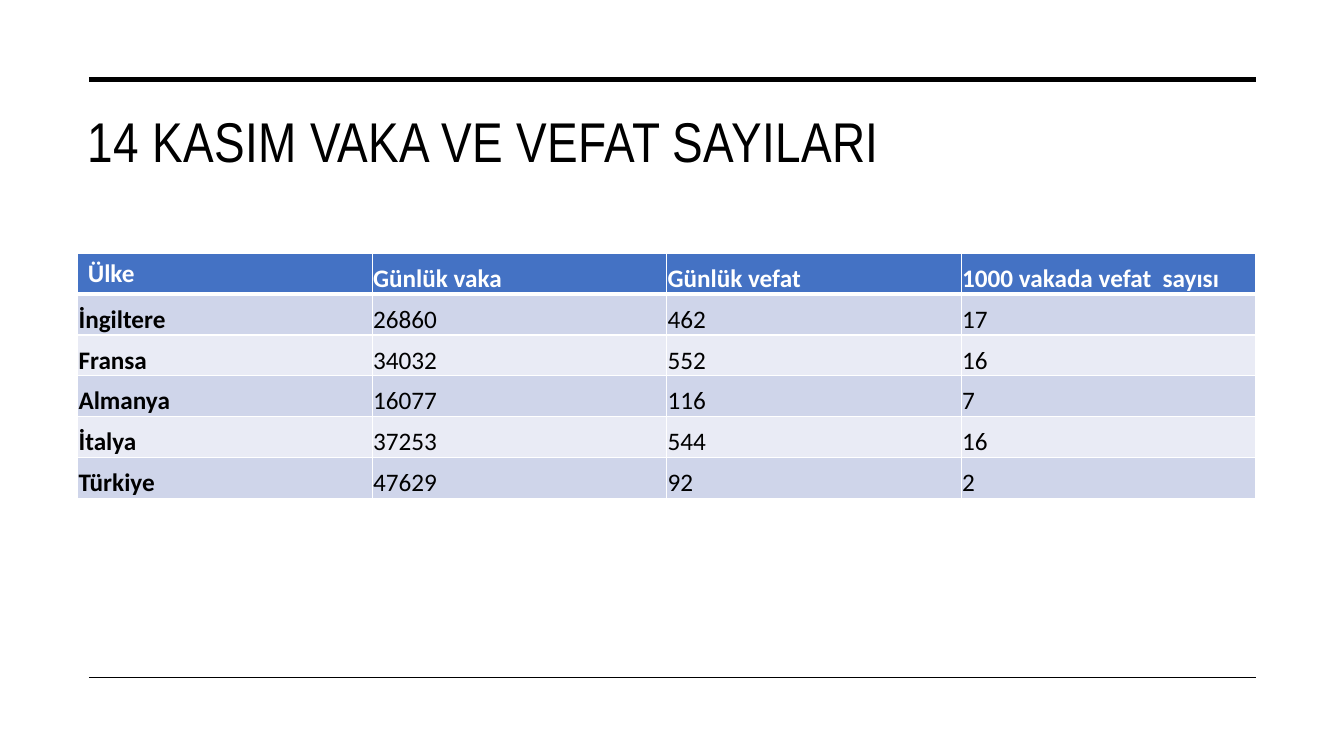
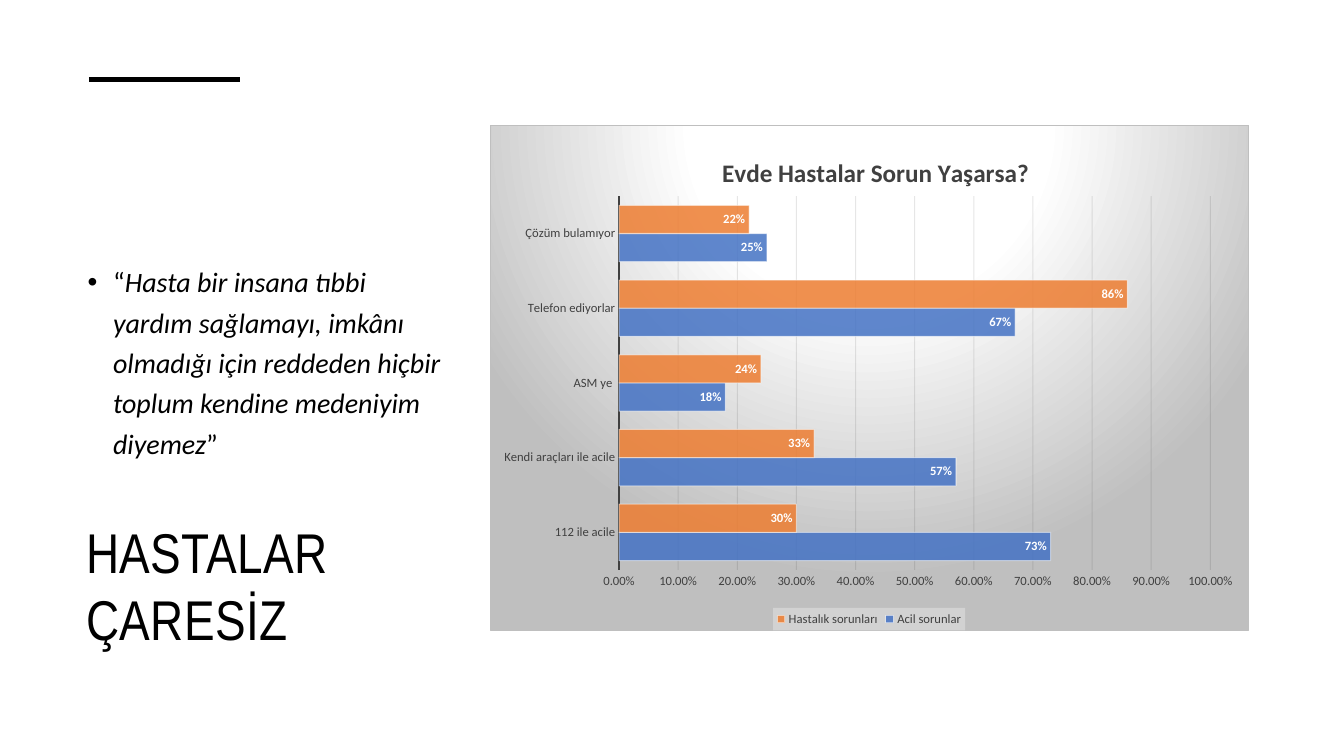
from dataclasses import dataclass

from lxml.etree import SubElement
from pptx import Presentation
from pptx.chart.data import CategoryChartData
from pptx.dml.color import RGBColor
from pptx.enum.chart import XL_CHART_TYPE, XL_LABEL_POSITION, XL_LEGEND_POSITION, XL_TICK_MARK
from pptx.enum.shapes import MSO_CONNECTOR
from pptx.enum.text import MSO_ANCHOR
from pptx.oxml import parse_xml
from pptx.oxml.ns import nsdecls, qn
from pptx.util import Cm, Pt

CASES_TITLE = "14 KASIM VAKA VE VEFAT SAYILARI"
CASES = [
    ("Ülke", "Günlük vaka", "Günlük vefat", "1000 vakada vefat  sayısı"),
    ("İngiltere", "26860", "462", "17"),
    ("Fransa", "34032", "552", "16"),
    ("Almanya", "16077", "116", "7"),
    ("İtalya", "37253", "544", "16"),
    ("Türkiye", "47629", "92", "2"),
]

HELPLESS_TITLE = "HASTALAR ÇARESİZ"
QUOTE = ("Hasta bir insana tıbbi yardım sağlamayı, imkânı olmadığı için "
         "reddeden hiçbir toplum kendine medeniyim diyemez")
HELP_TITLE = "Evde Hastalar Sorun Yaşarsa?"
HELP_ROUTES = ["112 ile acile", "Kendi araçları ile acile", "ASM ye ",
               "Telefon ediyorlar", "Çözüm bulamıyor"]
HELP_SHARES = {
    "Acil sorunlar": (0.73, 0.57, 0.18, 0.67, 0.25),
    "Hastalık sorunları": (0.3, 0.33, 0.24, 0.86, 0.22),
}


@dataclass(frozen=True)
class Theme:
    heading_font: str = "Arial Narrow"
    body_font: str = "Calibri"
    black: str = "000000"
    white: str = "FFFFFF"
    grey_text: str = "404040"
    grid: str = "0D0D0D"
    chart_edge: str = "BFBFBF"
    legend_back: str = "F2F2F2"
    blue: str = "4472C4"
    orange: str = "ED7D31"
    bands: tuple = ("E9EBF5", "CFD5EA")
    title_size: float = 40
    quote_size: float = 20
    table_size: float = 18
    chart_title_size: float = 18
    chart_size: float = 9
    thick: float = 3.5
    thin: float = 1


THEME = Theme()
LEFT, RIGHT = 2.24, 31.65
TOP_RULE, BOTTOM_RULE = 2.01, 17.07


def style_font(font, size, color, name=THEME.body_font, bold=False, italic=False):
    font.name, font.size, font.bold, font.italic = name, Pt(size), bold, italic
    font.color.rgb = RGBColor.from_string(color)


def write(paragraph, text, spacing=0, **style):
    run = paragraph.add_run()
    run.text = text
    style_font(run.font, **style)
    if spacing:
        run.font._element.set("spc", str(round(spacing * 100)))


def add_frame(slide, box, anchor=MSO_ANCHOR.TOP):
    frame = slide.shapes.add_textbox(*map(Cm, box)).text_frame
    frame.word_wrap = True
    frame.vertical_anchor = anchor
    return frame


def add_title(slide, text, box, anchor=MSO_ANCHOR.TOP):
    frame = add_frame(slide, box, anchor)
    write(frame.paragraphs[0], text, spacing=0.3, size=THEME.title_size,
          color=THEME.black, name=THEME.heading_font)


def add_rule(slide, y, width, right=RIGHT):
    rule = slide.shapes.add_connector(MSO_CONNECTOR.STRAIGHT, Cm(LEFT), Cm(y), Cm(right), Cm(y))
    rule.line.color.rgb = RGBColor.from_string(THEME.black)
    rule.line.width = Pt(width)
    SubElement(rule._element.spPr, qn("a:effectLst"))


def add_borders(cell, bottom):
    """Outline a cell in white, with its own bottom width in points."""
    properties = cell._tc.get_or_add_tcPr()
    widths = {"lnL": 1, "lnR": 1, "lnT": 1, "lnB": bottom}
    for place, (side, width) in enumerate(widths.items()):
        properties.insert(place, parse_xml(
            f'<a:{side} {nsdecls("a")} w="{Pt(width)}"><a:solidFill>'
            f'<a:srgbClr val="{THEME.white}"/></a:solidFill></a:{side}>'))


def add_cases_table(slide, box):
    table = slide.shapes.add_table(len(CASES), len(CASES[0]), *map(Cm, box)).table
    for r, record in enumerate(CASES):
        header = r == 0
        for c, value in enumerate(record):
            cell = table.cell(r, c)
            cell.fill.solid()
            cell.fill.fore_color.rgb = RGBColor.from_string(
                THEME.blue if header else THEME.bands[r % 2])
            if r or c:
                cell.vertical_anchor = MSO_ANCHOR.BOTTOM
                cell.margin_left = cell.margin_right = cell.margin_top = Cm(0.02)
                cell.margin_bottom = 0
            add_borders(cell, 3 if header else 1)
            write(cell.text_frame.paragraphs[0], value, size=THEME.table_size,
                  color=THEME.white if header else THEME.black, bold=header or c == 0)


def add_quote(slide, box):
    paragraph = add_frame(slide, box).paragraphs[0]
    paragraph.line_spacing = 1.2
    paragraph.space_before = Pt(10)
    properties = paragraph._p.get_or_add_pPr()
    properties.set("marL", str(Cm(0.64)))
    properties.set("indent", str(-Cm(0.64)))
    SubElement(properties, qn("a:buFont"), typeface="Arial")
    SubElement(properties, qn("a:buChar"), char="•")
    for text, italic in (("“", False), (QUOTE, True), ("”", False)):
        write(paragraph, text, size=THEME.quote_size, color=THEME.black, italic=italic)


def paint(fill, color, opacity=100):
    fill.solid()
    fill.fore_color.rgb = RGBColor.from_string(color)
    if opacity < 100:
        SubElement(fill._xPr.find(".//" + qn("a:srgbClr")), qn("a:alpha"),
                   val=str(opacity * 1000))


def stroke(line, color, width, opacity=100):
    paint(line.fill, color, opacity)
    line.width = Pt(width)


def manual_layout(x, y, extra=""):
    return parse_xml(
        f'<c:layout {nsdecls("c")}><c:manualLayout>{extra}'
        f'<c:xMode val="edge"/><c:yMode val="edge"/>'
        f'<c:x val="{x}"/><c:y val="{y}"/></c:manualLayout></c:layout>')


def place_plot(chart, x, y, w, h):
    layout = manual_layout(x, y, '<c:layoutTarget val="inner"/>')
    for side, value in (("c:w", w), ("c:h", h)):
        SubElement(layout[0], qn(side), val=str(value))
    area = chart._chartSpace.chart.plotArea
    for automatic in area.findall(qn("c:layout")):
        area.remove(automatic)
    area.insert(0, layout)


def fill_backgrounds(chart):
    """Give the chart a radial gradient and its legend a translucent panel."""
    stops = "".join(f'<a:gs pos="{at * 1000}"><a:srgbClr val="{color}"/></a:gs>' for at, color in
                    ((0, THEME.white), (39, THEME.white), (100, THEME.chart_edge)))
    backgrounds = (
        (chart._chartSpace,
         f'<a:gradFill><a:gsLst>{stops}</a:gsLst><a:path path="circle">'
         f'<a:fillToRect l="50000" t="-80000" r="50000" b="180000"/></a:path></a:gradFill>'
         f'<a:ln w="{Pt(0.75)}"><a:solidFill><a:srgbClr val="{THEME.chart_edge}"/>'
         f'</a:solidFill></a:ln>'),
        (chart.legend._element,
         f'<a:solidFill><a:srgbClr val="{THEME.legend_back}"><a:alpha val="39000"/>'
         f'</a:srgbClr></a:solidFill>'),
    )
    for parent, look in backgrounds:
        parent.find(qn("c:txPr")).addprevious(
            parse_xml(f'<c:spPr {nsdecls("c", "a")}>{look}</c:spPr>'))


def add_help_chart(slide, box):
    shares = CategoryChartData(number_format="0%")
    shares.categories = HELP_ROUTES
    for name, values in HELP_SHARES.items():
        shares.add_series(name, values)
    chart = slide.shapes.add_chart(XL_CHART_TYPE.BAR_CLUSTERED, *map(Cm, box), shares).chart
    style_font(chart.font, 10, THEME.black)

    chart.has_title = True
    write(chart.chart_title.text_frame.paragraphs[0], HELP_TITLE,
          size=THEME.chart_title_size, color=THEME.grey_text, bold=True)
    heading = chart.chart_title._element
    for automatic in heading.findall(qn("c:layout")):
        heading.remove(automatic)
    heading.find(qn("c:tx")).addnext(manual_layout(0.3, 0.05))
    chart.chart_title.include_in_layout = False

    chart.has_legend = True
    chart.legend.position = XL_LEGEND_POSITION.BOTTOM
    chart.legend.include_in_layout = False
    routes, percents = chart.category_axis, chart.value_axis
    for part in (chart.legend.font, routes.tick_labels.font, percents.tick_labels.font):
        style_font(part, THEME.chart_size, THEME.grey_text)
    for axis in (routes, percents):
        axis.major_tick_mark = axis.minor_tick_mark = XL_TICK_MARK.NONE
    stroke(routes.format.line, THEME.grey_text, 1.5)
    percents.format.line.fill.background()
    percents.minimum_scale, percents.maximum_scale, percents.major_unit = 0, 1, 0.1
    percents.tick_labels.number_format = "0.00%"
    percents.tick_labels.number_format_is_linked = False
    stroke(percents.major_gridlines.format.line, THEME.grid, 0.75, opacity=10)

    plot = chart.plots[0]
    plot.gap_width = 65
    plot.vary_by_categories = False
    for series, color in zip(plot.series, (THEME.blue, THEME.orange)):
        series.invert_if_negative = False
        paint(series.format.fill, color, opacity=85)
        stroke(series.format.line, THEME.white, 0.75, opacity=50)
        labels = series.data_labels
        labels.show_value = True
        labels.number_format = "0%"
        labels.number_format_is_linked = False
        labels.position = XL_LABEL_POSITION.INSIDE_END
        style_font(labels.font, THEME.chart_size, THEME.white, bold=True)

    place_plot(chart, 0.17, 0.14, 0.78, 0.74)
    fill_backgrounds(chart)


def main():
    deck = Presentation()
    deck.slide_width, deck.slide_height = Cm(33.87), Cm(19.05)
    blank = deck.slide_layouts[6]

    cases = deck.slides.add_slide(blank)
    add_rule(cases, TOP_RULE, THEME.thick)
    add_rule(cases, BOTTOM_RULE, THEME.thin)
    add_title(cases, CASES_TITLE, (1.96, 2.57, 29.69, 3.81))
    add_cases_table(cases, (1.96, 6.38, 29.69, 6.18))

    helpless = deck.slides.add_slide(blank)
    add_title(helpless, HELPLESS_TITLE, (1.93, 6.96, 8.48, 9.6), MSO_ANCHOR.BOTTOM)
    add_rule(helpless, TOP_RULE, THEME.thick, right=6.05)
    add_help_chart(helpless, (12.34, 3.15, 19.13, 12.75))
    add_quote(helpless, (1.96, 6.38, 9.58, 10.11))

    deck.save("out.pptx")


if __name__ == "__main__":
    main()
